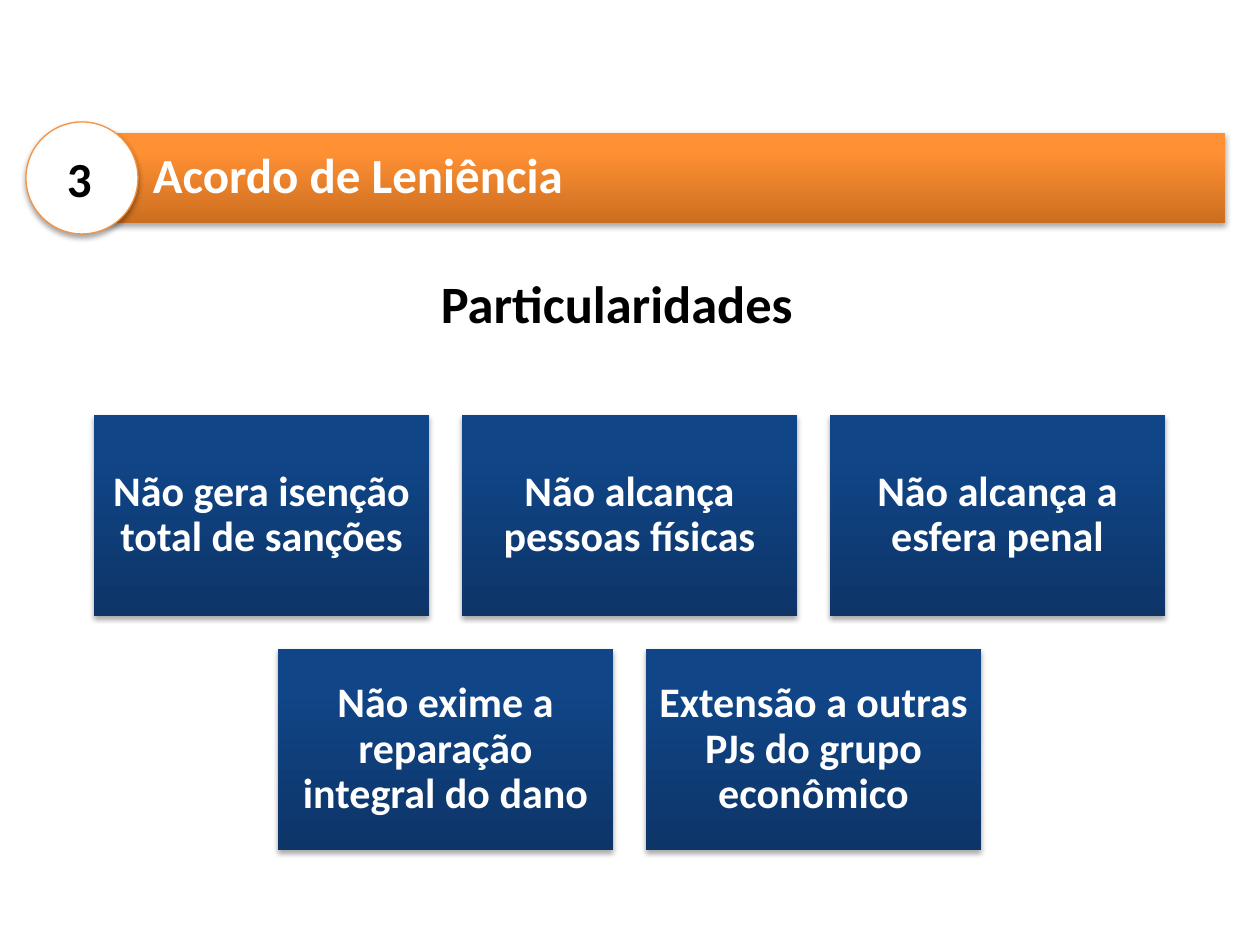
import pptx
import pptx.util
import pptx.dml.color
import pptx.enum.shapes
import pptx.enum.text
import pptx.oxml.ns
from dataclasses import dataclass
from lxml import etree

RGB = pptx.dml.color.RGBColor.from_string
Shape = pptx.enum.shapes.MSO_SHAPE
Align = pptx.enum.text.PP_ALIGN
Anchor = pptx.enum.text.MSO_ANCHOR
qn = pptx.oxml.ns.qn
SCALE = 914400 / 126  # EMU in one px


@dataclass(frozen=True)
class Theme:
    font: str = "Calibri"
    white: str = "FFFFFF"
    black: str = "000000"
    rim: str = "F69240"
    blue: tuple = ((0, "0D3568"), (80, "104587"), (100, "0E458A"))
    orange: tuple = ((0, "CC6E20"), (80, "FF9034"), (100, "FF9136"))
    card: int = 24
    title: int = 28
    head: int = 30


THEME = Theme()


def px(n):
    return pptx.util.Emu(round(n * SCALE))


def place(shape, box):
    shape.left, shape.top, shape.width, shape.height = map(px, box)


def shade(shape, stops):
    """Fill with a gradient that runs from bottom to top, without outline."""
    shape.fill.gradient()
    shape.fill.gradient_angle = 90
    items = shape.element.spPr.find(".//" + qn("a:gsLst"))
    items.clear()
    for pos, color in stops:
        stop = etree.SubElement(items, qn("a:gs"), pos=str(pos * 1000))
        etree.SubElement(stop, qn("a:srgbClr"), val=color)
    shape.line.fill.background()


def drop(shape):
    """Cast a soft shadow straight down."""
    shape.shadow.inherit = False
    effects = shape.element.spPr.find(qn("a:effectLst"))
    outer = etree.SubElement(
        effects, qn("a:outerShdw"), blurRad="40000", dist="23000",
        dir="5400000", rotWithShape="0")
    color = etree.SubElement(outer, qn("a:srgbClr"), val=THEME.black)
    etree.SubElement(color, qn("a:alpha"), val="35000")


def write(shape, text, size, color, align=Align.CENTER,
          anchor=Anchor.MIDDLE, inset=(13, 13, 13, 13), space=0.9):
    frame = shape.text_frame
    frame.auto_size = pptx.enum.text.MSO_AUTO_SIZE.NONE
    frame.word_wrap = True
    frame.vertical_anchor = anchor
    (frame.margin_left, frame.margin_top,
     frame.margin_right, frame.margin_bottom) = map(px, inset)
    para = frame.paragraphs[0]
    para.text = text
    para.alignment = align
    para.line_spacing = space
    font = para.font
    font.name, font.size, font.bold = THEME.font, pptx.util.Pt(size), True
    font.color.rgb = RGB(color)


def label(slide, box, text, size, align):
    shape = slide.shapes.add_textbox(*map(px, box))
    write(shape, text, size, THEME.black, align, Anchor.TOP, (13, 6, 13, 6), 1)


def banner(slide, box, number, text):
    x, y, w, h = box
    # Title bar
    bar = slide.shapes.title
    place(bar, (x + 56, y + 11, w - 56, h - 22))
    shade(bar, THEME.orange)
    drop(bar)
    write(bar, text, THEME.title, THEME.white, Align.LEFT,
          inset=(71, 10, 10, 10))
    # Number in its disc
    disc = slide.shapes.add_shape(Shape.OVAL, *map(px, (x, y, h, h)))
    disc.fill.solid()
    disc.fill.fore_color.rgb = RGB(THEME.white)
    disc.line.color.rgb = RGB(THEME.rim)
    disc.line.width = pptx.util.Pt(0.75)
    drop(disc)
    label(slide, (x + 28, y + 20, 51, 72), number, THEME.title, Align.LEFT)


def cards(slide, box, rows, gap=33):
    """Rows of equal cards, each row centred in the box."""
    x, y, w, h = box
    most = max(map(len, rows))
    wide = (w - gap * (most - 1)) // most
    high = (h - gap * (len(rows) - 1)) // len(rows)
    for i, row in enumerate(rows):
        span = len(row) * (wide + gap) - gap
        left = x + (w - span) // 2
        for j, text in enumerate(row):
            spot = (left + j * (wide + gap), y + i * (high + gap), wide, high)
            card = slide.shapes.add_shape(Shape.RECTANGLE, *map(px, spot))
            shade(card, THEME.blue)
            drop(card)
            write(card, text, THEME.card, THEME.white)


def main():
    deck = pptx.Presentation()
    deck.slide_width, deck.slide_height = px(1260), px(945)
    slide = deck.slides.add_slide(deck.slide_layouts.get_by_name("Title Only"))
    cards(slide, (94, 415, 1072, 435), [
        ["Não gera isenção total de sanções",
         "Não alcança pessoas físicas",
         "Não alcança a esfera penal"],
        ["Não exime a reparação integral do dano",
         "Extensão a outras PJs do grupo econômico"],
    ])
    label(slide, (50, 265, 1134, 118), "Particularidades", THEME.head,
          Align.CENTER)
    banner(slide, (26, 122, 1199, 112), "3", "Acordo de Leniência")
    deck.save("out.pptx")


if __name__ == "__main__":
    main()
